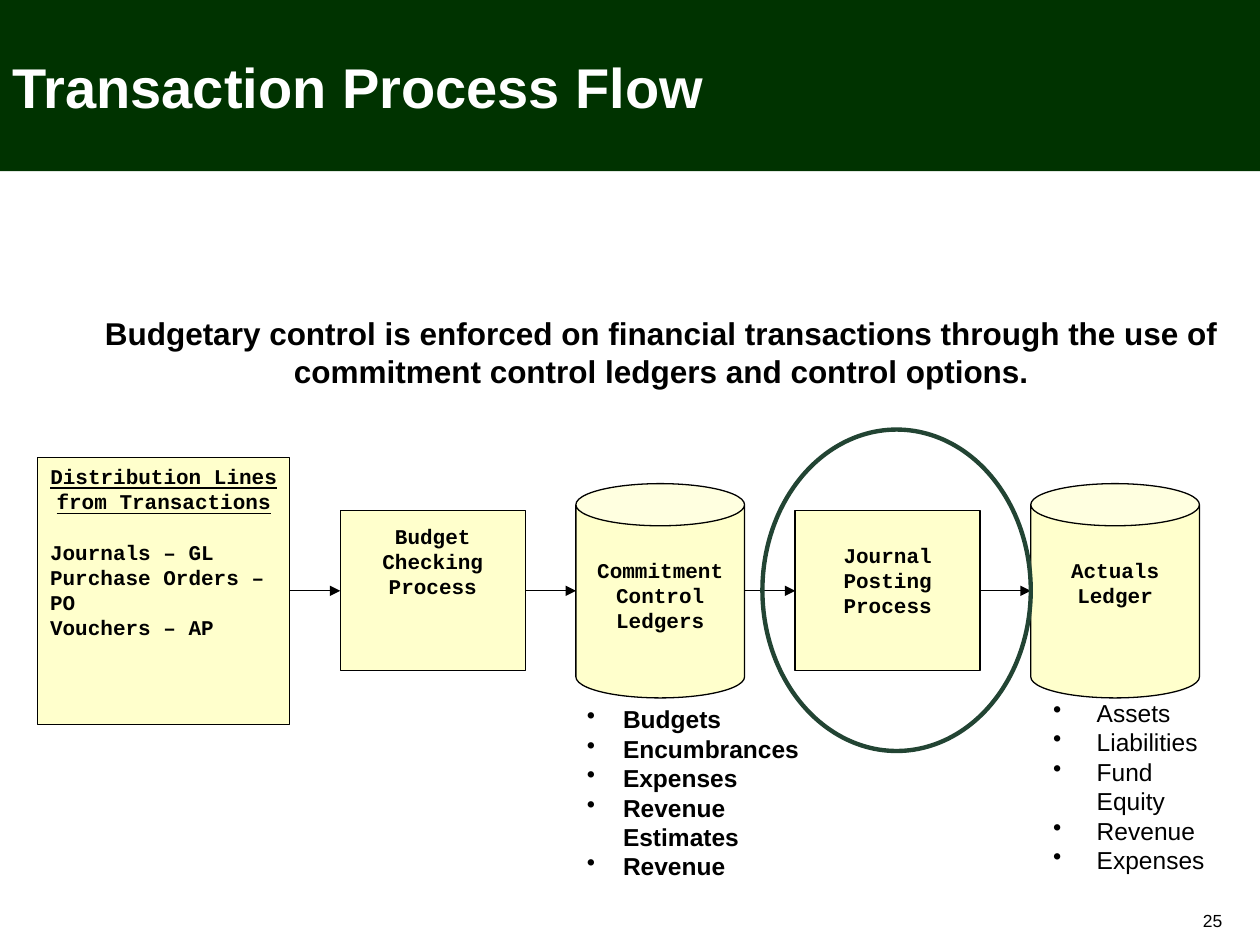
from lxml import etree
from pptx import Presentation
from pptx import util as u
from pptx.dml.color import RGBColor
from pptx.enum import shapes, text
from pptx.oxml.ns import qn

Cm, Pt = u.Cm, u.Pt
COLORS = {"band": "003300", "ink": "000000", "paper": "FFFFFF",
          "box": "FFFFCC", "ring": "224433"}
ALIGN = text.PP_ALIGN
KINDS = shapes.MSO_SHAPE


def color(name):
    return RGBColor.from_string(COLORS[name])


def write(shape, lines, size=12, font="Courier New", ink="ink", bold=True,
          underline=False, align=ALIGN.CENTER, top=0.13, anchor=text.MSO_ANCHOR.TOP,
          before=0, spacing=None, margin=0, bullet=None):
    frame = shape.text_frame
    frame.word_wrap = True
    frame.auto_size = text.MSO_AUTO_SIZE.NONE
    frame.vertical_anchor = anchor
    frame.margin_left = frame.margin_right = Cm(0.25)
    frame.margin_top, frame.margin_bottom = Cm(top), Cm(0.13)
    for number, line in enumerate(lines):
        first = frame.paragraphs[0]
        paragraph = frame.add_paragraph() if first.runs else first
        paragraph.alignment = align
        if before and number == 0:
            paragraph.space_before = Pt(before)
        if spacing:
            paragraph.line_spacing = spacing
        if margin:
            properties = paragraph._p.get_or_add_pPr()
            properties.set("marL", str(Cm(margin)))
            if bullet:
                properties.set("indent", str(-Cm(margin)))
                etree.SubElement(properties, qn("a:buChar")).set("char", bullet)
        run = paragraph.add_run()
        run.text = line
        run.font.name, run.font.size = font, Pt(size)
        run.font.bold, run.font.underline = bold, underline
        run.font.color.rgb = color(ink)


def add_text(slide, box, lines, **fmt):
    label = slide.shapes.add_textbox(*map(Cm, box))
    write(label, lines, **fmt)


def add_figure(slide, kind, box, fill=None, line=None, weight=0.75):
    figure = slide.shapes.add_shape(kind, *map(Cm, box))
    figure.shadow.inherit = False
    if fill:
        figure.fill.solid()
        figure.fill.fore_color.rgb = color(fill)
    else:
        figure.fill.background()
    if line:
        figure.line.color.rgb = color(line)
        figure.line.width = Pt(weight)
    else:
        figure.line.fill.background()
    return figure


def add_arrow(slide, start, end):
    y = start.top + start.height // 2
    arrow = slide.shapes.add_connector(
        shapes.MSO_CONNECTOR.STRAIGHT, start.left + start.width, y, end.left, y)
    if start.auto_shape_type == KINDS.RECTANGLE:
        arrow.begin_connect(start, 3)
    if end.auto_shape_type == KINDS.RECTANGLE:
        arrow.end_connect(end, 1)
    arrow.line.color.rgb = color("ink")
    arrow.line.width = Pt(0.75)
    etree.SubElement(arrow.line._get_or_add_ln(), qn("a:tailEnd")).set("type", "triangle")
    etree.SubElement(arrow._element.spPr, qn("a:effectLst"))


def header(slide, box):
    left, top, width, height = box
    band = add_figure(slide, KINDS.RECTANGLE, box, "band")
    slide.shapes._spTree.insert(2, band._element)
    title = slide.shapes.title
    title.left, title.top = Cm(left), Cm(top + 1.07)
    title.width, title.height = Cm(19.69), Cm(1.47)
    write(title, ["Transaction Process Flow"], size=32, font="Arial", ink="paper",
          align=ALIGN.LEFT, anchor=text.MSO_ANCHOR.BOTTOM)


def process_flow(slide, box):
    left, top, width, height = box
    axis, gap = top + height / 2, 1.02
    sizes = {"source": (KINDS.RECTANGLE, 5.08, 5.38),
             "process": (KINDS.RECTANGLE, 3.73, 3.23),
             "ledger": (KINDS.CAN, 3.4, 4.32)}
    steps = [
        ("source", ["Distribution Lines from Transactions"], {"underline": True}),
        ("process", ["Budget Checking", "Process"], {"top": 0.25}),
        ("ledger", ["Commitment Control", "Ledgers"], {"top": 0.64}),
        ("process", ["Journal Posting Process"], {"top": 0.64}),
        ("ledger", ["Actuals Ledger"], {"top": 0.64}),
    ]
    stages = []
    for role, lines, fmt in steps:
        kind, stage_width, stage_height = sizes[role]
        stage = add_figure(slide, kind,
                           (left, axis - stage_height / 2, stage_width, stage_height),
                           "box", "ink")
        write(stage, lines, **fmt)
        stages.append(stage)
        left += stage_width + gap
    write(stages[0], ["Journals – GL", "Purchase Orders –PO", "Vouchers – AP"],
          align=ALIGN.LEFT, before=14.4)
    for start, end in zip(stages, stages[1:]):
        add_arrow(slide, start, end)


def ledger_contents(slide, box, items, bold, margin):
    add_text(slide, box, items, size=14, font="Arial", bold=bold,
             align=ALIGN.LEFT, margin=margin, bullet="•")


def main():
    deck = Presentation()
    deck.slide_width, deck.slide_height = Cm(25.4), Cm(19.05)
    slide = deck.slides.add_slide(deck.slide_layouts[5])
    header(slide, (0, 0, 25.4, 3.45))
    add_text(slide, (20.19, 18.14, 4.7, 0.76), ["25"], size=10, font="Arial", bold=False,
             align=ALIGN.RIGHT, anchor=text.MSO_ANCHOR.BOTTOM, spacing=0.8)
    add_text(slide, (0, 6.2, 25.4, 1.78),
             ["Budgetary control is enforced on financial transactions through the use of "
              "commitment control ledgers and control options."],
             size=18, font="Arial", margin=1.27)
    process_flow(slide, (0.76, 9.22, 23.42, 5.38))
    ledger_contents(slide, (11.58, 14.07, 5.36, 4.09),
                    ["Budgets", "Encumbrances", "Expenses", "Revenue Estimates", "Revenue"],
                    True, 0.73)
    ledger_contents(slide, (20.98, 13.94, 3.76, 4.7),
                    ["Assets", "Liabilities", "Fund Equity", "Revenue", "Expenses"],
                    False, 0.88)
    add_figure(slide, KINDS.OVAL, (15.37, 8.66, 5.41, 6.48), line="ring", weight=2.5)
    deck.save("out.pptx")


if __name__ == "__main__":
    main()
